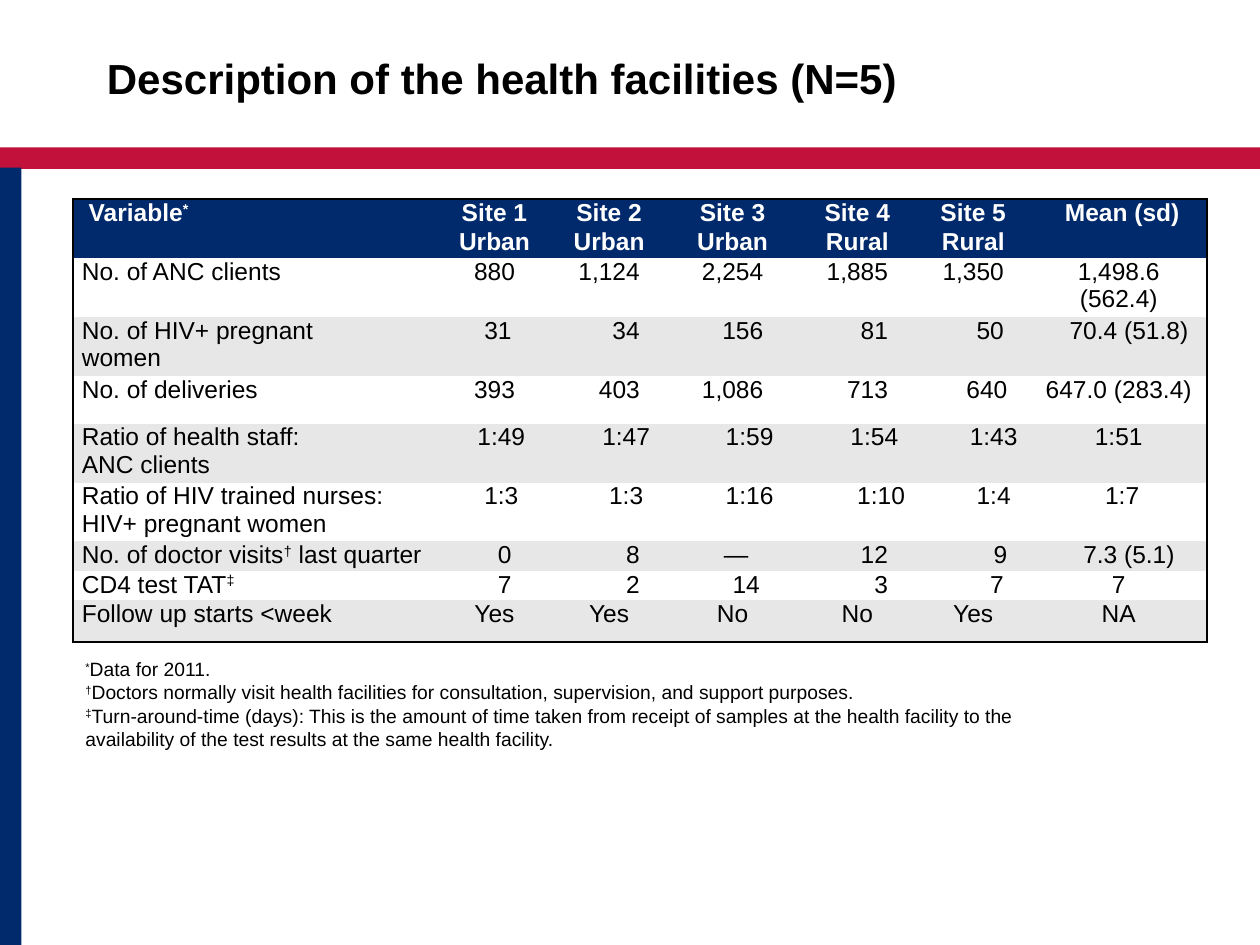
import itertools

import pptx
import pptx.dml.color
import pptx.enum.shapes
import pptx.enum.text
import pptx.oxml.ns
import pptx.util
from lxml import etree
from pptx.util import Inches

RED, NAVY, GREY, WHITE, BLACK = "C2113A", "002A6C", "E7E7E7", "FFFFFF", "000000"
MARKS = "*†‡"
NO_GRID_STYLE = "{2D5ABB26-0587-4C30-8999-92F81FD0307C}"
SPACE = 0.054  # width of one 14 pt space, the unit of the cell indents

COLS = [2.89, 0.91, 0.91, 1.05, 0.93, 0.91, 1.4]
LINE = 0.22
HEIGHTS = [LINE, LINE, 2 * LINE, 2 * LINE, 0.38, 2 * LINE, 2 * LINE, LINE, LINE, 0.33]

# Each row: cell texts, then the indent of each cell in spaces
ROWS = [
    (["Variable*", "Site 1", "Site 2", "Site 3", "Site 4", "Site 5", "Mean (sd)"],
     [1, 0, 0, 0, 0, 0, 1]),
    (["", "Urban", "Urban", "Urban", "Rural", "Rural", None], [0] * 7),
    (["No. of ANC clients", "880", "1,124", "2,254", "1,885", "1,350", "1,498.6 (562.4)"],
     [0] * 7),
    (["No. of HIV+ pregnant\nwomen", "31", "34", "156", "81", "50", "70.4 (51.8)"],
     [0, 1, 5, 3, 5, 5, 3]),
    (["No. of deliveries", "393", "403", "1,086", "713", "640", "647.0 (283.4)"],
     [0, 0, 3, 0, 3, 4, 0]),
    (["Ratio of health staff:\nANC clients", "1:49", "1:47", "1:59", "1:54", "1:43", "1:51"],
     [0, 2, 5, 5, 5, 6, 0]),
    (["Ratio of HIV trained nurses: HIV+ pregnant women",
      "1:3", "1:3", "1:16", "1:10", "1:4", "1:7"], [0, 2, 5, 5, 7, 6, 1]),
    (["No. of doctor visits† last quarter", "0", "8", "—", "12", "9", "7.3 (5.1)"],
     [0, 3, 7, 1, 5, 8, 3]),
    (["CD4 test TAT‡", "7", "2", "14", "3", "7", "7"], [0, 3, 7, 4, 7, 7, 0]),
    (["Follow up starts <week", "Yes", "Yes", "No", "No", "Yes", "NA"], [0] * 7),
]

NOTES = [
    "*Data for 2011.",
    "†Doctors normally visit health facilities for consultation, supervision, "
    "and support purposes.",
    "‡Turn-around-time (days): This is the amount of time taken from receipt of samples "
    "at the health facility to the availability of the test results at the same "
    "health facility.",
]


def rgb(color):
    return pptx.dml.color.RGBColor.from_string(color)


def add_runs(p, text, size, color=BLACK, bold=False):
    """Add text to a paragraph, with the footnote marks raised."""
    for raised, chars in itertools.groupby(text, key=lambda c: c in MARKS):
        r = p.add_run()
        r.text = "".join(chars)
        form = {"name": "Arial", "size": pptx.util.Pt(size), "bold": bold}
        for name, value in form.items():
            setattr(r.font, name, value)
        r.font.color.rgb = rgb(color)
        if raised:
            r._r.get_or_add_rPr().set("baseline", "30000")


def add_bar(s, x, y, w, h, color):
    sp = s.shapes.add_shape(pptx.enum.shapes.MSO_SHAPE.RECTANGLE,
                            Inches(x), Inches(y), Inches(w), Inches(h))
    sp.shadow.inherit = False
    sp.fill.solid()
    sp.fill.fore_color.rgb = rgb(color)
    sp.line.fill.background()


def add_text(s, x, y, w, h, lines, size, bold=False, top=0.05):
    sp = s.shapes.add_textbox(Inches(x), Inches(y), Inches(w), Inches(h))
    tf = sp.text_frame
    tf.word_wrap = True
    tf.margin_top = Inches(top)
    p = tf.paragraphs[0]
    for i, line in enumerate(lines):
        if i:
            p.add_line_break()
        add_runs(p, line, size, bold=bold)


def add_border(cell, side):
    tag = pptx.oxml.ns.qn
    ln = etree.SubElement(cell._tc.get_or_add_tcPr(), tag("a:ln" + side), w="12700")
    fill = etree.SubElement(ln, tag("a:solidFill"))
    etree.SubElement(fill, tag("a:srgbClr"), val=BLACK)


def fill_cell(cell, text, indent, header, centred):
    for name, value in {"left": 0.07 + indent * SPACE, "right": 0.07,
                        "top": 0, "bottom": 0}.items():
        setattr(cell, "margin_" + name, Inches(value))
    tf = cell.text_frame
    for i, line in enumerate(text.split("\n")):
        p = tf.add_paragraph() if i else tf.paragraphs[0]
        if centred:
            p.alignment = pptx.enum.text.PP_ALIGN.CENTER
        add_runs(p, line, 14, WHITE if header else BLACK, header)
        if not line:  # keeps an empty cell from stretching its row
            etree.SubElement(p._p, pptx.oxml.ns.qn("a:endParaRPr"), sz="1400")


def add_facility_table(s, x, y):
    frame = s.shapes.add_table(len(ROWS), len(COLS), Inches(x), Inches(y),
                               Inches(sum(COLS)), Inches(sum(HEIGHTS)))
    table = frame.table
    table.first_row = table.horz_banding = False
    table._tbl.tblPr.find(pptx.oxml.ns.qn("a:tableStyleId")).text = NO_GRID_STYLE
    for col, width in zip(table.columns, COLS):
        col.width = Inches(width)
    for row, height in zip(table.rows, HEIGHTS):
        row.height = Inches(height)

    last_row, last_col = len(ROWS) - 1, len(COLS) - 1
    table.cell(0, last_col).merge(table.cell(1, last_col))
    for i, (texts, indents) in enumerate(ROWS):
        header = i < 2
        color = NAVY if header else (GREY if i % 2 else WHITE)
        for j, (text, indent) in enumerate(zip(texts, indents)):
            cell = table.cell(i, j)
            if text is not None:
                fill_cell(cell, text, indent, header, j > 0)
            # Outer frame only
            edges = {"L": j == 0, "R": j == last_col, "T": i == 0, "B": i == last_row}
            for side, outer in edges.items():
                if outer:
                    add_border(cell, side)
            cell.fill.solid()
            cell.fill.fore_color.rgb = rgb(color)


def main():
    prs = pptx.Presentation()
    prs.slide_width, prs.slide_height = Inches(10), Inches(7.5)
    s = prs.slides.add_slide(prs.slide_layouts[6])

    # Page bands
    add_bar(s, 0, 1.17, 10, 0.17, RED)
    add_bar(s, 0, 1.33, 0.17, 6.17, NAVY)

    # Title, table and footnotes
    add_text(s, 0.75, 0.33, 8.5, 0.67, ["Description of the health facilities (N=5)"],
             24, bold=True, top=0.09)
    add_facility_table(s, 0.58, 1.58)
    add_text(s, 0.58, 5.17, 8.17, 1.14, NOTES, 11)

    prs.save("out.pptx")


if __name__ == "__main__":
    main()
